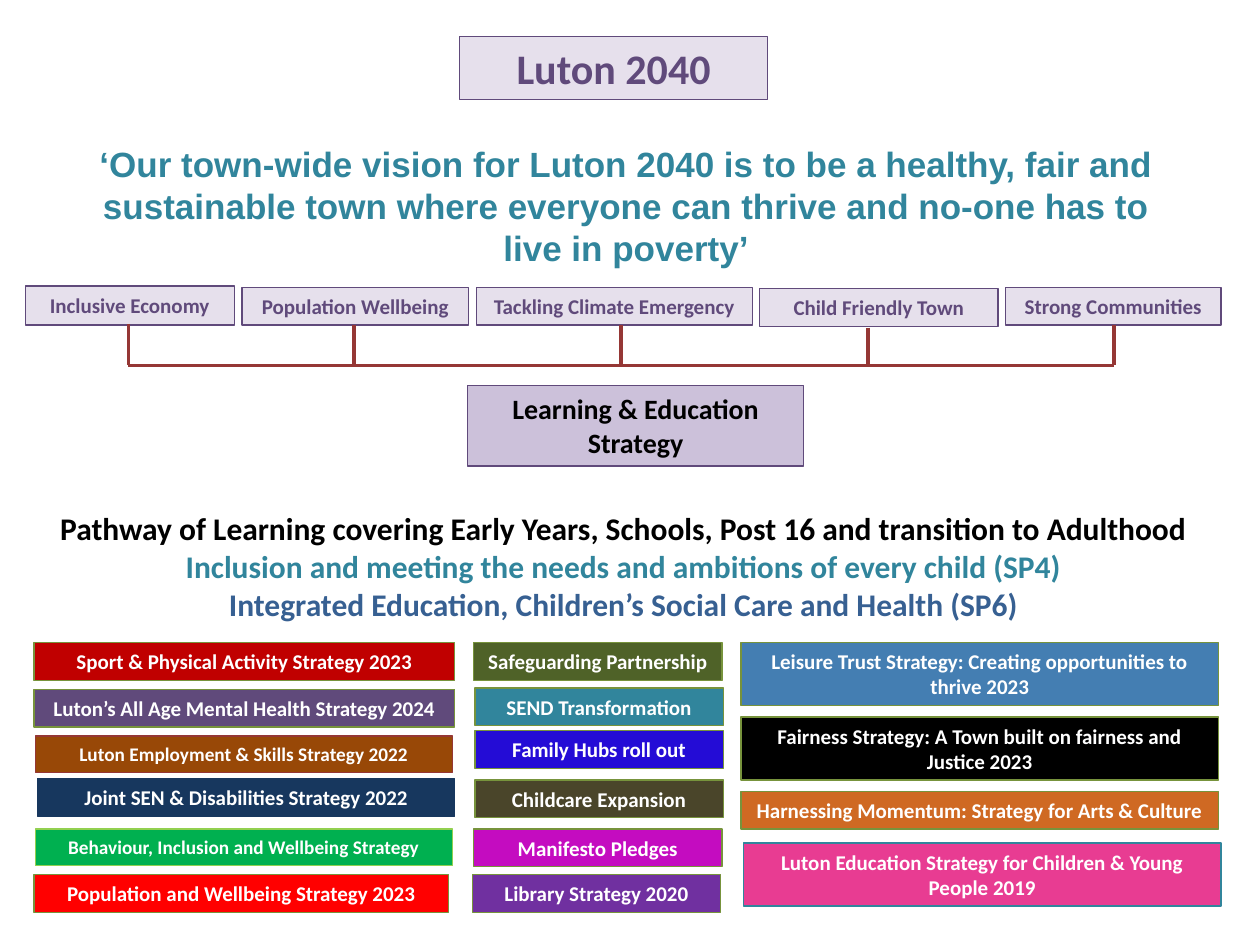
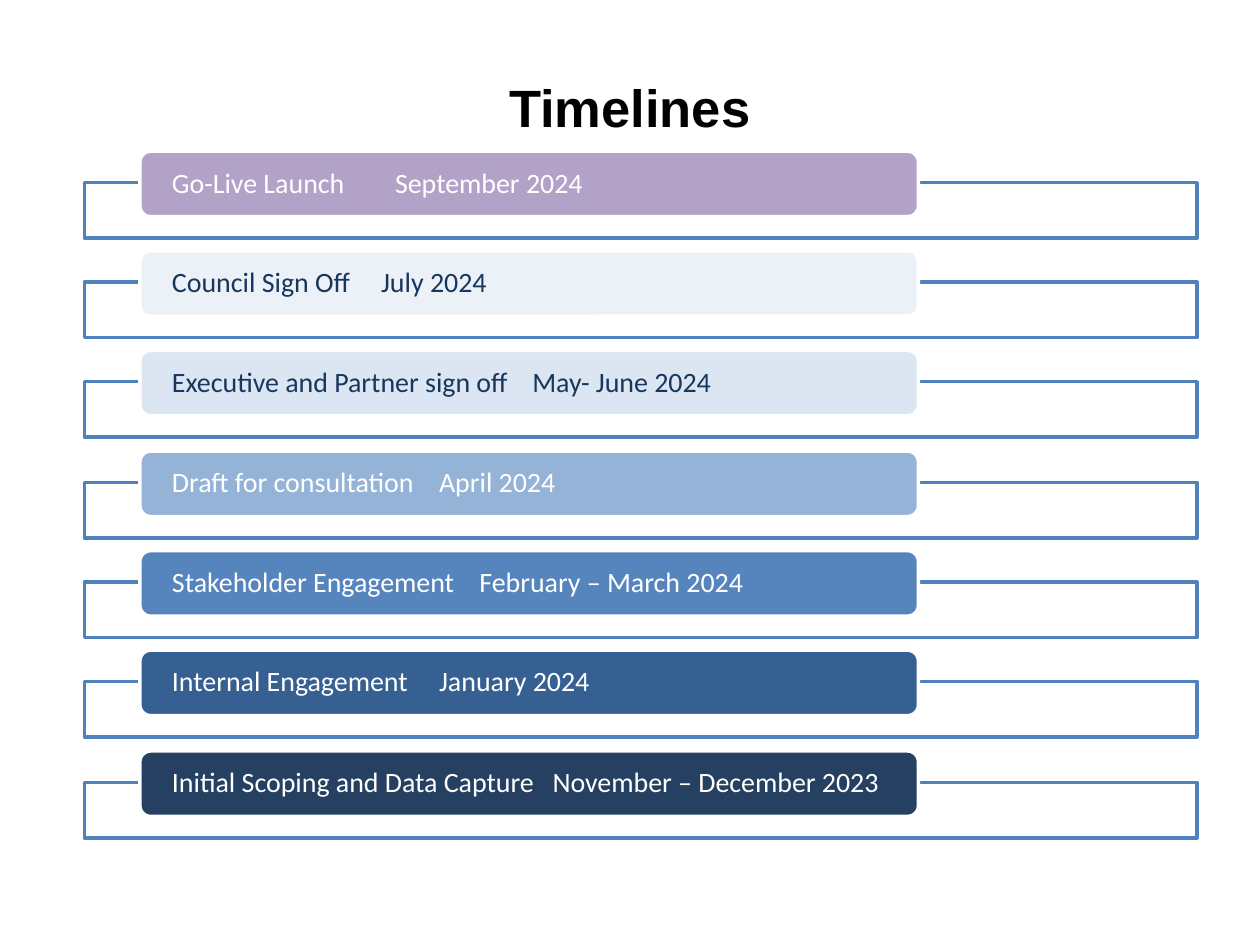
from dataclasses import dataclass

from lxml.etree import SubElement
from pptx import Presentation
from pptx.dml.color import RGBColor
from pptx.enum.shapes import MSO_CONNECTOR, MSO_SHAPE
from pptx.enum.text import MSO_ANCHOR, MSO_AUTO_SIZE, PP_ALIGN
from pptx.oxml.ns import qn
from pptx.util import Emu, Pt

PX = 9144
COLOURS = {
    "white": "FFFFFF", "black": "000000", "purple": "604A7B", "lilac": "E6E0EC",
    "mauve": "CCC1DA", "teal": "31859C", "blue": "376092", "maroon": "953735",
    "olive": "77933C", "crimson": "C00000", "brown": "984807", "navy": "17375E",
    "green": "00B050", "lime": "92D050", "red": "FF0000", "moss": "4F6228",
    "ultramarine": "240CD6", "umber": "4A452A", "magenta": "C40CC0",
    "violet": "7030A0", "steel": "447EB2", "orange": "CF6923", "pink": "E83C92",
    "outline": "4F81BD", "lavender": "B3A2C7", "frost": "ECF1F8", "ice": "DCE6F2",
    "sky": "95B3D7", "azure": "5685BE", "midnight": "254061",
}


@dataclass(frozen=True)
class Tile:
    text: str
    left: int
    top: int
    width: int
    height: int
    fill: str
    line: str = "olive"
    ink: str = "white"
    size: int = 12


@dataclass(frozen=True)
class Pillar:
    text: str
    left: int
    top: int
    width: int
    height: int
    stem_x: int
    stem_top: int


@dataclass(frozen=True)
class Milestone:
    stage: str
    date: str
    date_x: int
    fill: str
    ink: str = "white"


PILLARS = [
    Pillar("Inclusive Economy", 20, 227, 166, 31, 102, 257),
    Pillar("Population Wellbeing", 192, 228, 180, 30, 281, 258),
    Pillar("Tackling Climate Emergency", 378, 228, 219, 30, 493, 258),
    Pillar("Child Friendly Town", 603, 229, 189, 30, 689, 260),
    Pillar("Strong Communities", 798, 228, 171, 30, 884, 258),
]
STEM_BOTTOM = 290

HEADLINES = [
    Tile("Luton 2040", 365, 29, 244, 50, "lilac", "purple", "purple", 24),
    Tile("Learning & Education Strategy", 371, 306, 267, 64, "mauve", "purple", "black", 16),
]

STRATEGIES = [
    Tile("Sport & Physical Activity Strategy 2023", 27, 510, 334, 30, "crimson"),
    Tile("Luton’s All Age Mental Health Strategy 2024", 27, 547, 334, 30, "purple"),
    Tile("Luton Employment & Skills Strategy 2022", 28, 584, 331, 29, "brown", "maroon", size=11),
    Tile("Joint SEN & Disabilities Strategy 2022", 30, 618, 331, 30, "navy", "navy"),
    Tile("Behaviour, Inclusion and Wellbeing Strategy", 28, 658, 331, 29, "green", "lime", size=11),
    Tile("Population and Wellbeing Strategy 2023", 27, 694, 329, 30, "red"),
    Tile("Safeguarding Partnership", 376, 510, 197, 30, "moss"),
    Tile("SEND Transformation", 377, 546, 197, 30, "teal"),
    Tile("Family Hubs roll out", 377, 580, 197, 30, "ultramarine"),
    Tile("Childcare Expansion", 377, 619, 197, 30, "umber"),
    Tile("Manifesto Pledges", 376, 658, 197, 30, "magenta"),
    Tile("Library Strategy 2020", 375, 694, 197, 30, "violet"),
    Tile("Leisure Trust Strategy: Creating opportunities to thrive 2023", 588, 510, 379, 50, "steel"),
    Tile("Fairness Strategy: A Town built on fairness and Justice 2023", 588, 569, 379, 50, "black"),
    Tile("Harnessing Momentum: Strategy for Arts & Culture", 588, 628, 379, 30, "orange"),
    Tile("Luton Education Strategy for Children & Young People 2019", 590, 669, 379, 50, "pink", "teal"),
]

PATHWAY = [
    ("Pathway of Learning covering Early Years, Schools, Post 16 and transition to Adulthood", "black"),
    ("Inclusion and meeting the needs and ambitions of every child (SP4)", "teal"),
    ("Integrated Education, Children’s Social Care and Health (SP6)", "blue"),
]

MILESTONES = [
    Milestone("Go-Live Launch", "September 2024", 177, "lavender"),
    Milestone("Council Sign Off", "July 2024", 166, "frost", "navy"),
    Milestone("Executive and Partner sign off", "May- June 2024", 286, "ice", "navy"),
    Milestone("Draft for consultation", "April 2024", 212, "sky"),
    Milestone("Stakeholder Engagement", "February – March 2024", 244, "azure"),
    Milestone("Internal Engagement", "January 2024", 212, "blue"),
    Milestone("Initial Scoping and Data Capture", "November – December 2023", 302, "midnight"),
]


def px(length: int) -> Emu:
    return Emu(length * PX)


def rgb(colour: str) -> RGBColor:
    return RGBColor.from_string(COLOURS[colour])


def write(paragraph, text: str, *, size: int, colour: str, font: str = "Calibri",
          bold: bool = True, align=PP_ALIGN.CENTER, spacing=None, tab: int = 0) -> None:
    paragraph.alignment = align
    if spacing:
        paragraph.line_spacing = spacing
    if tab:
        stops = SubElement(paragraph._p.get_or_add_pPr(), qn("a:tabLst"))
        SubElement(stops, qn("a:tab"), pos=str(px(tab)), algn="l")
    run = paragraph.add_run()
    run.text = text
    run.font.name = font
    run.font.size = Pt(size)
    run.font.bold = bold
    run.font.color.rgb = rgb(colour)


def add_panel(slide, box: tuple[int, int, int, int], fill: str, line: str,
              weight: float = 0.75, preset=MSO_SHAPE.RECTANGLE):
    panel = slide.shapes.add_shape(preset, *map(px, box))
    panel.shadow.inherit = False
    panel.fill.solid()
    panel.fill.fore_color.rgb = rgb(fill)
    panel.line.color.rgb = rgb(line)
    panel.line.width = Pt(weight)
    return panel


def add_tile(slide, tile: Tile) -> None:
    panel = add_panel(slide, (tile.left, tile.top, tile.width, tile.height), tile.fill, tile.line)
    frame = panel.text_frame
    frame.word_wrap = True
    frame.auto_size = MSO_AUTO_SIZE.SHAPE_TO_FIT_TEXT
    frame.vertical_anchor = MSO_ANCHOR.TOP
    write(frame.paragraphs[0], tile.text, size=tile.size, colour=tile.ink)


def add_caption(slide, box: tuple[int, int, int, int], anchor=MSO_ANCHOR.TOP):
    frame = slide.shapes.add_textbox(*map(px, box)).text_frame
    frame.word_wrap = True
    frame.vertical_anchor = anchor
    return frame


def add_title(slide, text: str, left: int, top: int, anchor, **style) -> None:
    frame = add_caption(slide, (left, top, 900, 69), anchor)
    write(frame.paragraphs[0], text, font="Arial", **style)


def add_line(slide, x1: int, y1: int, x2: int, y2: int) -> None:
    branch = slide.shapes.add_connector(MSO_CONNECTOR.STRAIGHT, *map(px, (x1, y1, x2, y2)))
    branch.line.color.rgb = rgb("maroon")
    branch.line.width = Pt(2)
    SubElement(branch._element.spPr, qn("a:effectLst"))


def add_milestone(slide, milestone: Milestone, top: int) -> None:
    add_panel(slide, (67, top + 25, 883, 44), "white", "outline", 2)
    bar = add_panel(slide, (111, top, 618, 52), milestone.fill, "white", 2,
                    MSO_SHAPE.ROUNDED_RECTANGLE)
    frame = bar.text_frame
    frame.word_wrap = True
    frame.vertical_anchor = MSO_ANCHOR.MIDDLE
    frame.margin_left = frame.margin_right = px(23)
    frame.margin_top = frame.margin_bottom = 0
    write(frame.paragraphs[0], f"{milestone.stage}\t{milestone.date}", size=16,
          colour=milestone.ink, bold=False, align=PP_ALIGN.LEFT, spacing=0.9,
          tab=milestone.date_x)


def build_vision(slide) -> None:
    add_title(slide, "‘Our town-wide vision for Luton 2040 is to be a healthy, fair and "
              "sustainable town where everyone can thrive and no-one has to live in poverty’",
              47, 108, MSO_ANCHOR.TOP, size=20, colour="teal", spacing=Pt(24))
    for pillar in PILLARS:
        add_tile(slide, Tile(pillar.text, pillar.left, pillar.top, pillar.width,
                             pillar.height, "lilac", "purple", "purple"))
        add_line(slide, pillar.stem_x, pillar.stem_top, pillar.stem_x, STEM_BOTTOM)
    add_line(slide, PILLARS[0].stem_x, STEM_BOTTOM, PILLARS[-1].stem_x, STEM_BOTTOM)
    pathway = add_caption(slide, (20, 399, 950, 101))
    for index, (text, colour) in enumerate(PATHWAY):
        paragraph = pathway.add_paragraph() if index else pathway.paragraphs[0]
        write(paragraph, text, size=18, colour=colour)
    for tile in HEADLINES + STRATEGIES:
        add_tile(slide, tile)


def build_timelines(slide) -> None:
    add_title(slide, "Timelines", 50, 50, MSO_ANCHOR.MIDDLE, size=30, colour="black")
    for index, milestone in enumerate(MILESTONES):
        add_milestone(slide, milestone, 120 + index * 476 // 6)


def main() -> None:
    deck = Presentation()
    deck.slide_width, deck.slide_height = px(1000), px(750)
    for build in (build_vision, build_timelines):
        build(deck.slides.add_slide(deck.slide_layouts[6]))
    deck.save("out.pptx")


if __name__ == "__main__":
    main()
